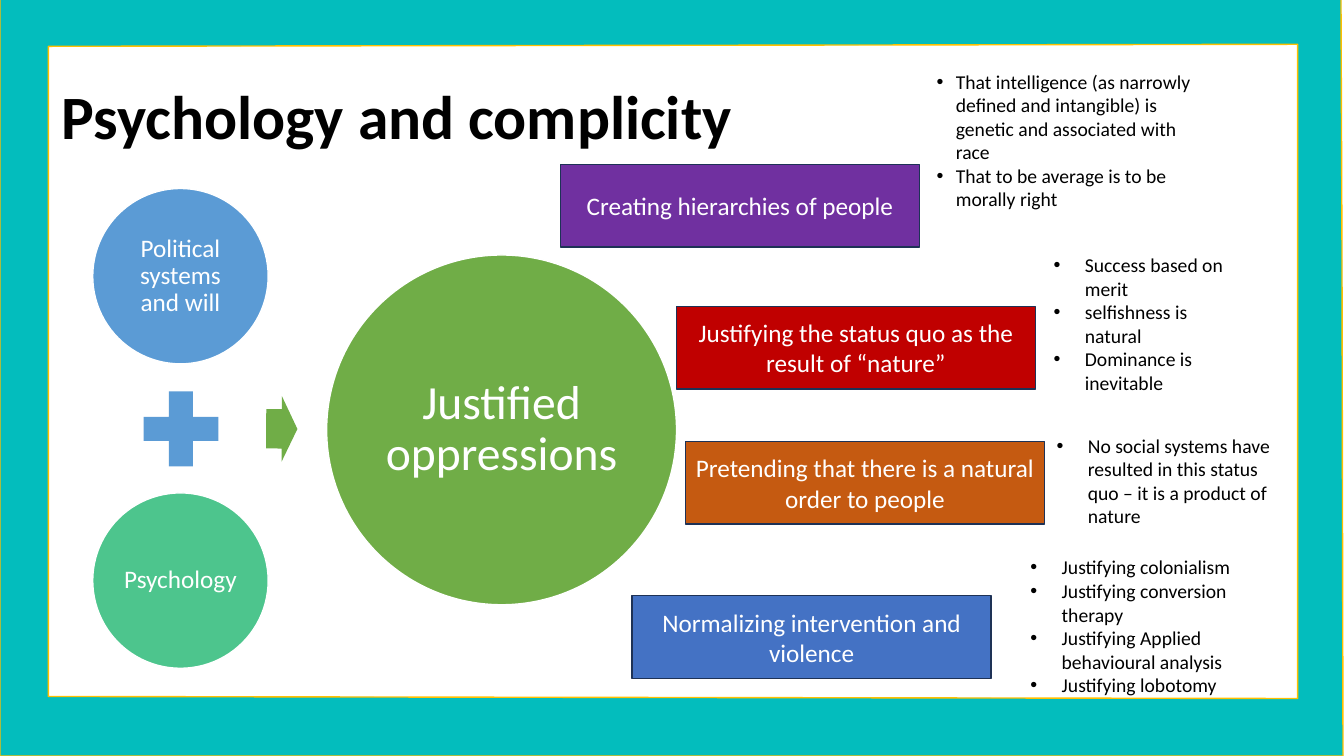
"""Build the slide on psychology and complicity."""
from dataclasses import dataclass

from lxml.etree import SubElement
from pptx import Presentation
from pptx.dml.color import RGBColor
from pptx.enum.shapes import MSO_SHAPE as Kind
from pptx.enum.text import MSO_ANCHOR as Anchor, MSO_AUTO_SIZE as Fit, PP_ALIGN as Align
from pptx.oxml.ns import qn
from pptx.util import Pt

SCALE = 9144
FONT = "Calibri"
WHITE, BLACK, NAVY, GOLD, TEAL = "FFFFFF", "000000", "1E3256", "FFC000", "03BDBD"
BLUE, GREEN, MINT = "5B9BD5", "70AD47", "4DC58D"


@dataclass(frozen=True)
class Circle:
    left: int
    top: int
    width: int
    fill: str
    text: str
    size: int = 18
    inset: int = 3


@dataclass(frozen=True)
class Claim:
    left: int
    top: int
    fill: str
    text: str


@dataclass(frozen=True)
class Notes:
    left: int
    top: int
    width: int
    height: int
    indent: int
    items: tuple[str, ...]


CIRCLES = (
    Circle(92, 187, 174, BLUE, "Political systems and will"),
    Circle(92, 489, 174, MINT, "Psychology"),
    Circle(324, 253, 347, GREEN, "Justified oppressions", 34, 5),
)
CLAIMS = (
    Claim(556, 163, "7030A0", "Creating hierarchies of people"),
    Claim(671, 304, "C00000", "Justifying the status quo as the result of “nature”"),
    Claim(680, 438, "C55A11", "Pretending that there is a natural order to people"),
    Claim(627, 591, "4472C4", "Normalizing intervention and violence"),
)
NOTES = (
    Notes(919, 64, 287, 151, 19, (
        "That intelligence (as narrowly defined and intangible) is genetic and associated with race",
        "That to be average is to be morally right")),
    Notes(1035, 246, 211, 151, 31, (
        "Success based on merit", "selfishness is natural", "Dominance is inevitable")),
    Notes(1038, 425, 239, 104, 31, (
        "No social systems have resulted in this status quo – it is a product of nature",)),
    Notes(1012, 546, 255, 151, 31, (
        "Justifying colonialism", "Justifying conversion therapy",
        "Justifying Applied behavioural analysis", "Justifying lobotomy")),
)
OUTER = ((0, -3), (1330, -4), (1331, 246), (1332, 750), (0, 750))
INNER = ((48, 46), (48, 691), (1287, 693), (1287, 44))


def px(value: int) -> int:
    """Turn px into EMU."""
    return value * SCALE


def tint(code: str) -> RGBColor:
    """Turn a hex string into a colour."""
    return RGBColor.from_string(code)


def paint(shape, fill: str, line: str | None = None) -> None:
    """Give a shape a flat fill and a thin line or none."""
    shape.shadow.inherit = False
    shape.fill.solid()
    shape.fill.fore_color.rgb = tint(fill)
    if line:
        shape.line.color.rgb = tint(line)
        shape.line.width = Pt(1)
    else:
        shape.line.fill.background()


def write(shape, *lines: str, size: int = 18, color: str = WHITE, bold: bool = False,
          align=Align.CENTER, anchor=Anchor.MIDDLE, space: float = 1.0,
          inset: int | None = None, indent: int = 0) -> None:
    """Fill a shape with formatted text, bulleted when an indent is given."""
    frame = shape.text_frame
    frame.word_wrap = True
    frame.auto_size = Fit.NONE
    frame.vertical_anchor = anchor
    if inset is not None:
        frame.margin_left = frame.margin_right = px(inset)
        frame.margin_top = frame.margin_bottom = px(inset)
    for rank, line in enumerate(lines):
        para = frame.add_paragraph() if rank else frame.paragraphs[0]
        if indent:
            props = para._p.get_or_add_pPr()
            props.set("marL", str(px(indent)))
            props.set("indent", str(-px(indent)))
            SubElement(props, qn("a:buFont")).set("typeface", "Arial")
            SubElement(props, qn("a:buChar")).set("char", "•")
        para.alignment = align
        para.line_spacing = space
        para.space_before = Pt(0)
        run = para.add_run()
        run.text = line
        font = run.font
        font.name, font.size, font.bold = FONT, Pt(size), bold
        font.color.rgb = tint(color)


def place(shape, left: int, top: int, width: int, height: int) -> None:
    """Move and size a shape."""
    shape.left, shape.top = px(left), px(top)
    shape.width, shape.height = px(width), px(height)


def draw(slide, kind, left: int, top: int, width: int, height: int,
         fill: str, line: str | None = None):
    """Add a painted preset shape."""
    shape = slide.shapes.add_shape(kind, px(left), px(top), px(width), px(height))
    paint(shape, fill, line)
    return shape


def border(slide) -> None:
    """Add the teal frame round the page."""
    path = slide.shapes.build_freeform(*OUTER[0], scale=SCALE)
    path.add_line_segments(OUTER[1:], close=True)
    path.move_to(*INNER[0])
    path.add_line_segments(INNER[1:], close=True)
    paint(path.convert_to_shape(), TEAL, GOLD)


def main() -> None:
    """Build and save the deck."""
    deck = Presentation()
    deck.slide_width, deck.slide_height = px(1333), px(750)
    slide = deck.slides.add_slide(deck.slide_layouts[4])
    title, *bodies = slide.placeholders
    place(title, 51, 46, 1150, 145)
    write(title, "Psychology and complicity", size=44, color=BLACK, bold=True,
          align=Align.LEFT, space=0.9)

    for item in CIRCLES:
        disc = draw(slide, Kind.OVAL, item.left, item.top, item.width, item.width,
                    item.fill, WHITE)
        write(disc, item.text, size=item.size, space=0.9, inset=item.inset)
    draw(slide, Kind.MATH_PLUS, 129, 375, 101, 101, BLUE)
    arrow = draw(slide, Kind.RIGHT_ARROW, 264, 393, 31, 65, GREEN)
    arrow.adjustments[0] = 0.6
    arrow.rotation = 0.3
    border(slide)

    for claim in CLAIMS:
        box = draw(slide, Kind.RECTANGLE, claim.left, claim.top, 356, 82, claim.fill, NAVY)
        write(box, claim.text)
    for body, notes in zip(bodies, NOTES):
        slide.shapes._spTree.append(body._element)
        place(body, notes.left, notes.top, notes.width, notes.height)
        write(body, *notes.items, size=14, color=BLACK, align=Align.LEFT,
              anchor=Anchor.TOP, indent=notes.indent)
    deck.save("out.pptx")


if __name__ == "__main__":
    main()
